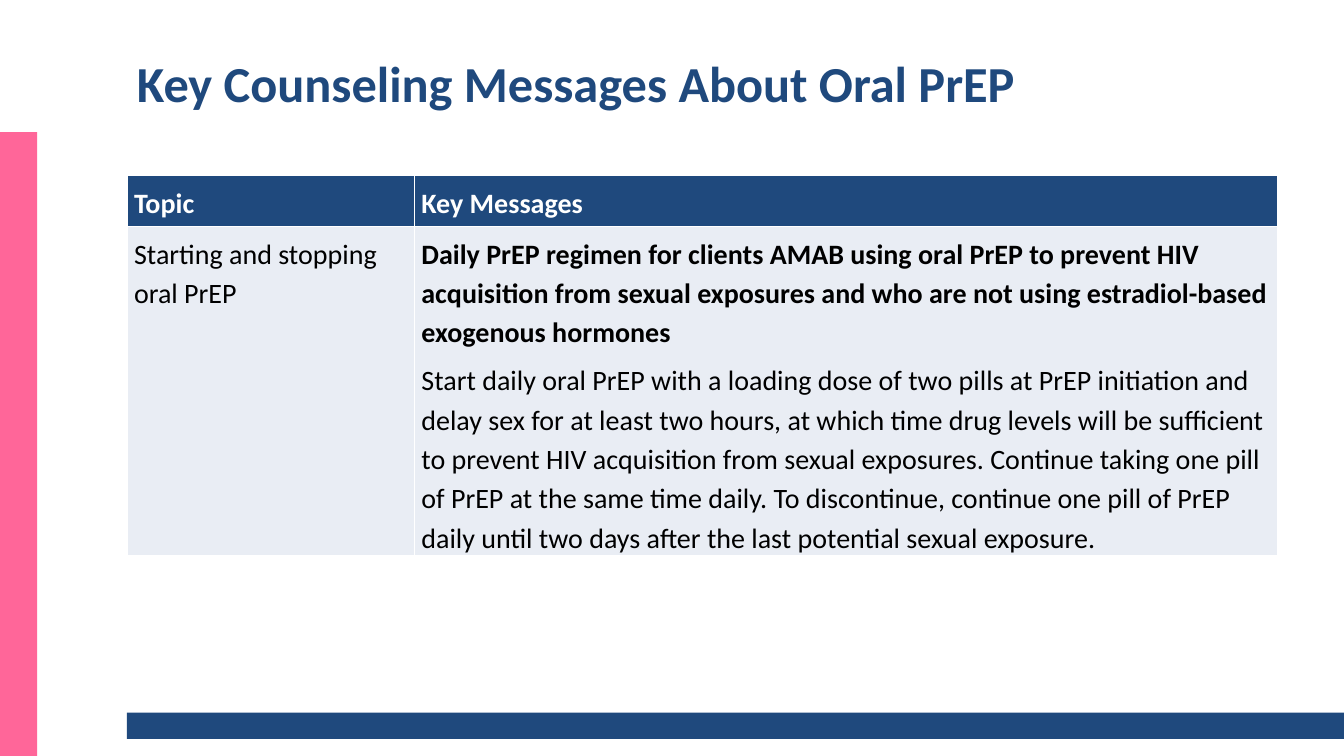
import pptx
import pptx.util
import pptx.dml.color
import pptx.enum.shapes
import pptx.enum.text
import pptx.oxml
import pptx.oxml.ns
from pptx.util import Inches

COLORS = {"navy": "1F497D", "pink": "FF6699", "pale": "E9EDF4",
          "white": "FFFFFF", "black": "000000"}
FONT = "Calibri"


def rgb(name):
    return pptx.dml.color.RGBColor.from_string(COLORS[name])


def write(p, text, size=20, color="black", bold=False, line=None, space=None):
    """Put formatted text into a paragraph."""
    r = p.add_run()
    r.text = text
    r.font.name = FONT
    r.font.size = pptx.util.Pt(size)
    r.font.bold = bold
    r.font.color.rgb = rgb(color)
    if line is not None:
        p.line_spacing = line
    if space is not None:
        p.space_before = p.space_after = pptx.util.Pt(space)


class Deck:
    def __init__(self, width, height):
        self.prs = pptx.Presentation()
        self.prs.slide_width = Inches(width)
        self.prs.slide_height = Inches(height)
        self.s = self.prs.slides.add_slide(self.prs.slide_layouts[6])

    def bar(self, x, y, w, h, color):
        sp = self.s.shapes.add_shape(pptx.enum.shapes.MSO_SHAPE.RECTANGLE,
                                     Inches(x), Inches(y), Inches(w), Inches(h))
        sp.shadow.inherit = False
        sp.fill.solid()
        sp.fill.fore_color.rgb = rgb(color)
        sp.line.fill.background()

    def title(self, x, y, w, h, text):
        tf = self.s.shapes.add_textbox(Inches(x), Inches(y), Inches(w), Inches(h)).text_frame
        tf.word_wrap = True
        tf.vertical_anchor = pptx.enum.text.MSO_ANCHOR.MIDDLE
        write(tf.paragraphs[0], text, size=36, color="navy", bold=True)

    def table(self, x, y, cols, rows, content):
        """Each cell is a list of (text, format) paragraphs."""
        tbl = self.s.shapes.add_table(len(rows), len(cols), Inches(x), Inches(y),
                                      Inches(sum(cols)), Inches(sum(rows))).table
        for column, width in zip(tbl.columns, cols):
            column.width = Inches(width)
        for i, (height, cells) in enumerate(zip(rows, content)):
            tbl.rows[i].height = Inches(height)
            for j, paragraphs in enumerate(cells):
                self.cell(tbl.cell(i, j), paragraphs, "pale" if i else "navy")

    def cell(self, cell, paragraphs, fill):
        cell.margin_left = cell.margin_right = Inches(0.07)
        cell.margin_top = cell.margin_bottom = Inches(0.06)
        tf = cell.text_frame
        for i, (text, style) in enumerate(paragraphs):
            p = tf.add_paragraph() if i else tf.paragraphs[0]
            write(p, text, line=1.15, **style)
        # Borders come before the fill in the cell properties
        tcPr = cell._tc.get_or_add_tcPr()
        for side in ("lnL", "lnR", "lnT", "lnB"):
            tcPr.append(pptx.oxml.parse_xml(
                f'<a:{side} {pptx.oxml.ns.nsdecls("a")} w="12700"><a:solidFill>'
                f'<a:srgbClr val="{COLORS["white"]}"/></a:solidFill></a:{side}>'))
        cell.fill.solid()
        cell.fill.fore_color.rgb = rgb(fill)


def main():
    deck = Deck(13.33, 7.5)
    left, width = 1.26, 11.41

    # Side and bottom bars
    deck.bar(0, 1.31, 0.37, 6.19, "pink")
    deck.bar(left, 7.07, 13.33 - left, 0.26, "navy")

    # Title
    deck.title(left, 0.35, width, 0.94, "Key Counseling Messages About Oral PrEP")

    # Counseling table
    head = {"color": "white", "bold": True}
    regimen = ("Daily PrEP regimen for clients AMAB using oral PrEP to prevent HIV "
               "acquisition from sexual exposures and who are not using "
               "estradiol-based exogenous hormones")
    dosing = ("Start daily oral PrEP with a loading dose of two pills at PrEP initiation "
              "and delay sex for at least two hours, at which time drug levels will be "
              "sufficient to prevent HIV acquisition from sexual exposures. Continue "
              "taking one pill of PrEP at the same time daily. To discontinue, continue "
              "one pill of PrEP daily until two days after the last potential sexual "
              "exposure.")
    deck.table(left, 1.74, [2.85, 8.56], [0.48, 3.25], [
        [[("Topic", head)], [("Key Messages", head)]],
        [[("Starting and stopping oral PrEP", {})],
         [(regimen, {"bold": True, "space": 3}), (dosing, {"space": 3})]],
    ])

    deck.prs.save("out.pptx")


if __name__ == "__main__":
    main()
